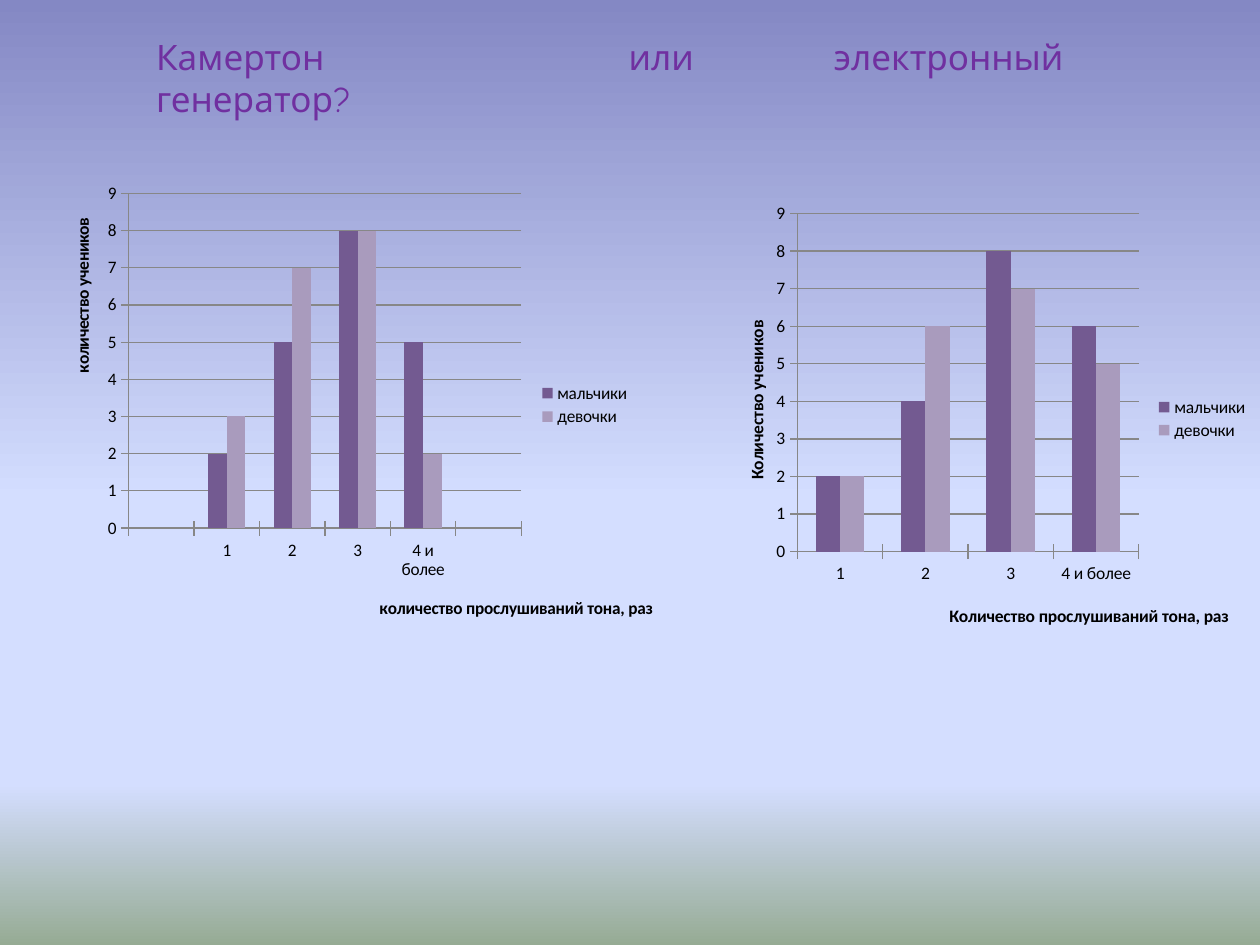
from lxml import etree
from pptx import Presentation
from pptx.chart.data import CategoryChartData
from pptx.dml.color import RGBColor
from pptx.enum.chart import XL_CHART_TYPE as CT, XL_LEGEND_POSITION as LP, XL_TICK_MARK as TM
from pptx.enum.text import MSO_AUTO_SIZE
from pptx.oxml.ns import qn
from pptx.util import Inches, Pt


def color(value):
    return RGBColor.from_string(value)


def place(element, index, x, y, w=None, h=None):
    """Give a chart part a manual layout, in shares of the chart's size."""
    for old in element.findall(qn("c:layout")):
        element.remove(old)
    layout = etree.Element(qn("c:layout"))
    manual = etree.SubElement(layout, qn("c:manualLayout"))
    marks = [("xMode", "edge"), ("yMode", "edge"), ("x", x), ("y", y), ("w", w), ("h", h)]
    if element.tag == qn("c:plotArea"):
        marks.insert(0, ("layoutTarget", "inner"))
    for tag, val in marks:
        if val is not None:
            etree.SubElement(manual, qn(f"c:{tag}")).set("val", str(val))
    element.insert(index, layout)


prs = Presentation()
prs.slide_width, prs.slide_height = Inches(10), Inches(7.5)
W, H = prs.slide_width, prs.slide_height
s = prs.slides.add_slide(prs.slide_layouts[6])

# Background
fill = s.background.fill
fill.gradient()
fill.gradient_angle = 270
stops = next(s._element.iter(qn("a:gsLst")))
for stop in list(stops):
    stops.remove(stop)
for share, shade in [(0, "8488C4"), (53, "D4DEFF"), (83, "D4DEFF"), (100, "96AB94")]:
    stop = etree.SubElement(stops, qn("a:gs"), pos=str(share * 1000))
    etree.SubElement(stop, qn("a:srgbClr"), val=shade)

# Charts: frame in shares of the slide, parts in shares of the chart
SERIES = [("мальчики", "735A91"), ("девочки", "A99BBD")]
CHARTS = [
    dict(frame=(0.035, 0.185, 0.488, 0.492), cats=["", "1", "2", "3", "4 и более", ""],
         values=[(None, 2, 5, 8, 5, None), (None, 3, 7, 8, 2, None)],
         titles=("количество прослушиваний тона, раз", "количество учеников"),
         plot=(0.14, 0.04, 0.65, 0.72), cat_at=(0.55, 0.9), val_at=(0.04, 0.08),
         legend=(0.81, 0.44, 0.17, 0.11)),
    dict(frame=(0.563, 0.207, 0.437, 0.477), cats=["1", "2", "3", "4 и более"],
         values=[(2, 4, 8, 6), (2, 6, 7, 5)],
         titles=("Количество прослушиваний тона, раз", "Количество учеников"),
         plot=(0.16, 0.04, 0.62, 0.75), cat_at=(0.43, 0.9), val_at=(0.06, 0.27),
         legend=(0.8, 0.44, 0.19, 0.11)),
]
for c in CHARTS:
    data = CategoryChartData()
    data.categories = c["cats"]
    for (name, _), values in zip(SERIES, c["values"]):
        data.add_series(name, values)
    x, y, w, h = c["frame"]
    chart = s.shapes.add_chart(CT.COLUMN_CLUSTERED, int(x * W), int(y * H),
                               int(w * W), int(h * H), data).chart
    chart.has_title = False
    chart.font.name, chart.font.size = "Calibri", Pt(10)
    chart.font.color.rgb = color("000000")

    plot = chart.plots[0]
    plot.vary_by_categories = False
    plot.gap_width, plot.overlap = 150, 0
    for series, (_, shade) in zip(plot.series, SERIES):
        series.format.fill.solid()
        series.format.fill.fore_color.rgb = color(shade)

    cat_axis, val_axis = chart.category_axis, chart.value_axis
    val_axis.minimum_scale, val_axis.maximum_scale, val_axis.major_unit = 0, 9, 1
    val_axis.has_major_gridlines = True
    lines = [val_axis.major_gridlines.format.line]
    for axis, title, at in zip((cat_axis, val_axis), c["titles"], (c["cat_at"], c["val_at"])):
        axis.major_tick_mark = TM.CROSS
        lines.append(axis.format.line)
        tf = axis.axis_title.text_frame
        tf.text = title
        p = tf.paragraphs[0]
        p.font.size, p.font.bold = Pt(10), True
        place(axis.axis_title._element, 1, *at)
    tf._txBody.bodyPr.set("rot", "-5400000")
    tf._txBody.bodyPr.set("vert", "horz")
    for line in lines:
        line.color.rgb = color("878787")
        line.width = Pt(0.75)

    chart.has_legend = True
    chart.legend.position = LP.RIGHT
    chart.legend.include_in_layout = False
    place(chart.legend._element, 1, *c["legend"])
    place(chart._chartSpace.chart.plotArea, 0, *c["plot"])

# Heading, its words spread by tab stops
sp = s.shapes.add_textbox(int(0.114 * W), int(0.031 * H), int(0.858 * W), int(0.059 * H))
tf = sp.text_frame
tf.word_wrap = True
tf.auto_size = MSO_AUTO_SIZE.SHAPE_TO_FIT_TEXT
p = tf.paragraphs[0]
r = p.add_run()
r.text = "Камертон\tили\tэлектронный генератор?"
p.font.name, p.font.size = "Comic Neue", Pt(20)
p.font.color.rgb = color("7030A0")
tabs = etree.Element(qn("a:tabLst"))
for stop in (3.75, 5.38):
    etree.SubElement(tabs, qn("a:tab"), pos=str(Inches(stop)), algn="l")
p._p.get_or_add_pPr().insert(0, tabs)

prs.save("out.pptx")
